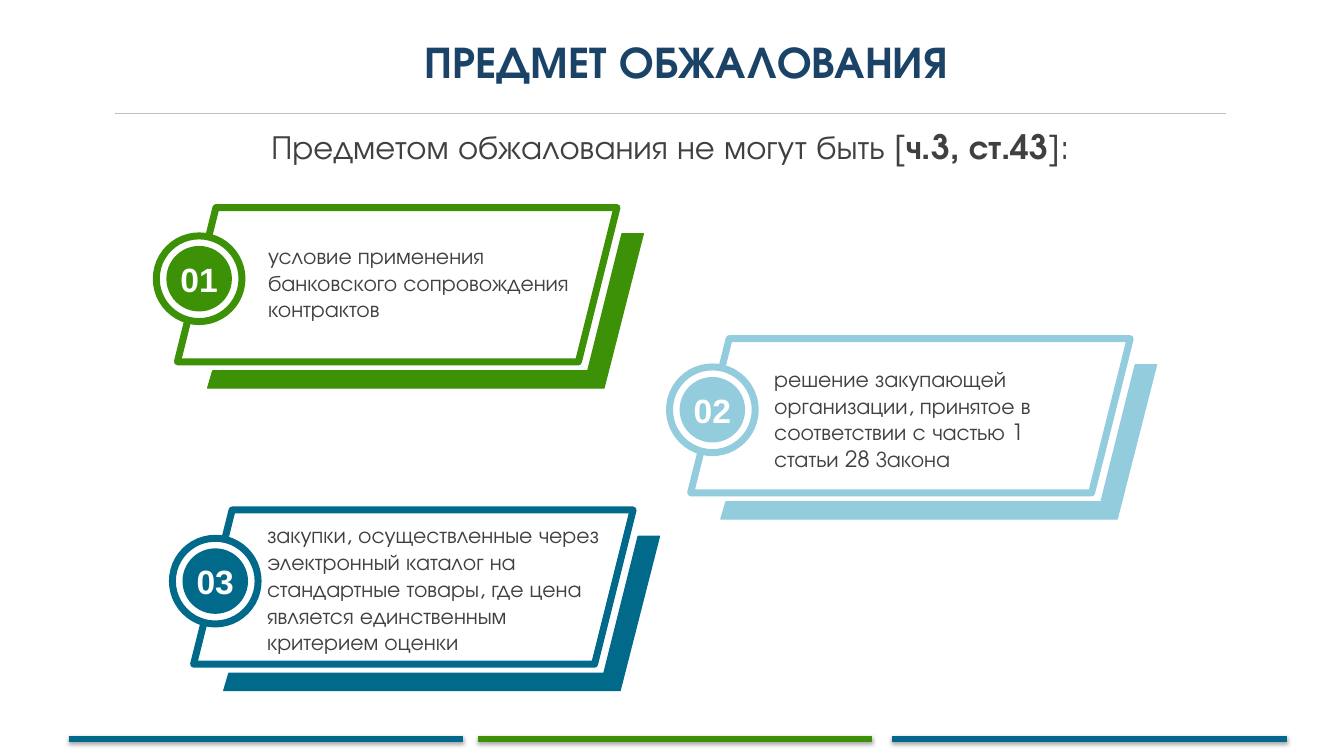
import lxml.etree
import pptx
import pptx.dml.color
import pptx.enum.shapes
import pptx.enum.text
import pptx.oxml.ns
import pptx.util
from dataclasses import dataclass

Inches = pptx.util.Inches
Pt = pptx.util.Pt
Kind = pptx.enum.shapes.MSO_SHAPE
Align = pptx.enum.text.PP_ALIGN
Anchor = pptx.enum.text.MSO_ANCHOR
qn = pptx.oxml.ns.qn


@dataclass(frozen=True)
class Theme:
    face: str = "TeX Gyre Adventor"
    digit: str = "Arial"
    title: str = "1B4367"
    ink: str = "404040"
    rule: str = "BFBFBF"
    white: str = "FFFFFF"
    green: str = "3D9106"
    teal: str = "01698A"
    navy: str = "05678E"
    sky: str = "93CDDD"
    big: int = 32
    mid: int = 24
    small: int = 16


THEME = Theme()


def rgb(code):
    return pptx.dml.color.RGBColor.from_string(code)


def style(par, size, color, face=THEME.face, bold=False, align=Align.LEFT):
    par.alignment = align
    par.font.name = face
    par.font.size = Pt(size)
    par.font.bold = bold
    par.font.color.rgb = rgb(color)


def paint(shape, fill, line=None, width=1):
    shape.shadow.inherit = False
    shape.fill.solid()
    shape.fill.fore_color.rgb = rgb(fill)
    if line:
        shape.line.color.rgb = rgb(line)
        shape.line.width = Pt(width)
    else:
        shape.line.fill.background()


def add_text(slide, box, text, pad=0.1):
    frame = slide.shapes.add_textbox(*map(Inches, box)).text_frame
    frame.word_wrap = True
    frame.margin_left = frame.margin_right = Inches(pad)
    frame.text = text
    return frame.paragraphs[0]


def add_line(slide, left, right, y, color, width, shade=False):
    line = slide.shapes.add_connector(
        pptx.enum.shapes.MSO_CONNECTOR.STRAIGHT,
        Inches(left), Inches(y), Inches(right), Inches(y))
    line.line.color.rgb = rgb(color)
    line.line.width = Pt(width)
    sub = lxml.etree.SubElement
    effects = sub(line._element.spPr, qn("a:effectLst"))
    if shade:
        cast = sub(effects, qn("a:outerShdw"), blurRad=str(Pt(3.1)),
                   dist=str(Pt(1.8)), dir="5400000", rotWithShape="0")
        black = sub(cast, qn("a:srgbClr"), val="000000")
        sub(black, qn("a:alpha"), val="35000")


def add_head(slide, left, top, width):
    # Title
    title = slide.shapes.title
    title.left, title.top = Inches(left), Inches(top)
    title.width, title.height = Inches(width), Inches(0.64)
    frame = title.text_frame
    frame.text = "ПРЕДМЕТ ОБЖАЛОВАНИЯ"
    frame.vertical_anchor = Anchor.MIDDLE
    style(frame.paragraphs[0], THEME.big, THEME.title, bold=True,
          align=Align.CENTER)

    # Rule and lead sentence
    add_line(slide, left + 0.13, left + 11.15, top + 0.85, THEME.rule, 0.75)
    lead = add_text(slide, (left - 0.03, top + 0.92, 11.34, 0.5),
                    "Предметом обжалования не могут быть [")
    for text, bold in (("ч.3, ст.43", True), ("]:", False)):
        run = lead.add_run()
        run.text = text
        run.font.bold = bold
    style(lead, THEME.mid, THEME.ink, align=Align.CENTER)


def add_card(slide, left, top, number, text, color, note):
    # Slanted panel
    def place(kind, x, y, width, height):
        return slide.shapes.add_shape(
            kind, Inches(left + x), Inches(top + y),
            Inches(width), Inches(height))

    panel = place(Kind.PARALLELOGRAM, 0, 0, 4.36, 1.53)
    paint(panel, THEME.white, color, 5)

    # Solid edge below and to the right
    edge = [(4.41, 0.26), (4.62, 0.26), (4.23, 1.79),
            (0.3, 1.79), (0.35, 1.62), (4.07, 1.62)]
    spots = [(Inches(left + x), Inches(top + y)) for x, y in edge]
    outline = slide.shapes.build_freeform(*spots[0])
    outline.add_line_segments(spots[1:], close=True)
    paint(outline.convert_to_shape(), color, color)

    # Wording
    x, y, width, height = note
    par = add_text(slide, (left + x, top + y, width, height), text)
    style(par, THEME.small, THEME.ink)

    # Number badge
    paint(place(Kind.OVAL, -0.21, 0.28, 0.85, 0.85), THEME.white, color, 5)
    paint(place(Kind.OVAL, -0.11, 0.38, 0.65, 0.65), color)
    par = add_text(slide, (left - 0.11, top + 0.46, 0.65, 0.5), number, 0)
    style(par, THEME.mid, THEME.white, THEME.digit, True, Align.CENTER)


def add_foot(slide, y):
    bars = ((0.68, THEME.teal), (4.74, THEME.green), (8.85, THEME.navy))
    for left, color in bars:
        add_line(slide, left, left + 3.91, y, color, 4.5, shade=True)


def main():
    deck = pptx.Presentation()
    deck.slide_width, deck.slide_height = Inches(13.33), Inches(7.5)
    slide = deck.slides.add_slide(deck.slide_layouts[5])

    add_foot(slide, 7.33)
    add_head(slide, 1.01, 0.28, 11.6)
    cards = (
        (1.76, 2.06, "01",
         "условие применения банковского сопровождения контрактов",
         THEME.green, (0.8, 0.29, 3.38, 0.91)),
        (1.92, 5.06, "03",
         "закупки, осуществленные через электронный каталог на стандартные "
         "товары, где цена является единственным критерием оценки",
         THEME.teal, (0.63, 0.06, 3.55, 1.45)),
        (6.85, 3.36, "02",
         "решение закупающей организации, принятое в соответствии с частью 1 "
         "статьи 28 Закона",
         THEME.sky, (0.73, 0.21, 3.22, 1.18)),
    )
    for card in cards:
        add_card(slide, *card)
    deck.save("out.pptx")


if __name__ == "__main__":
    main()
